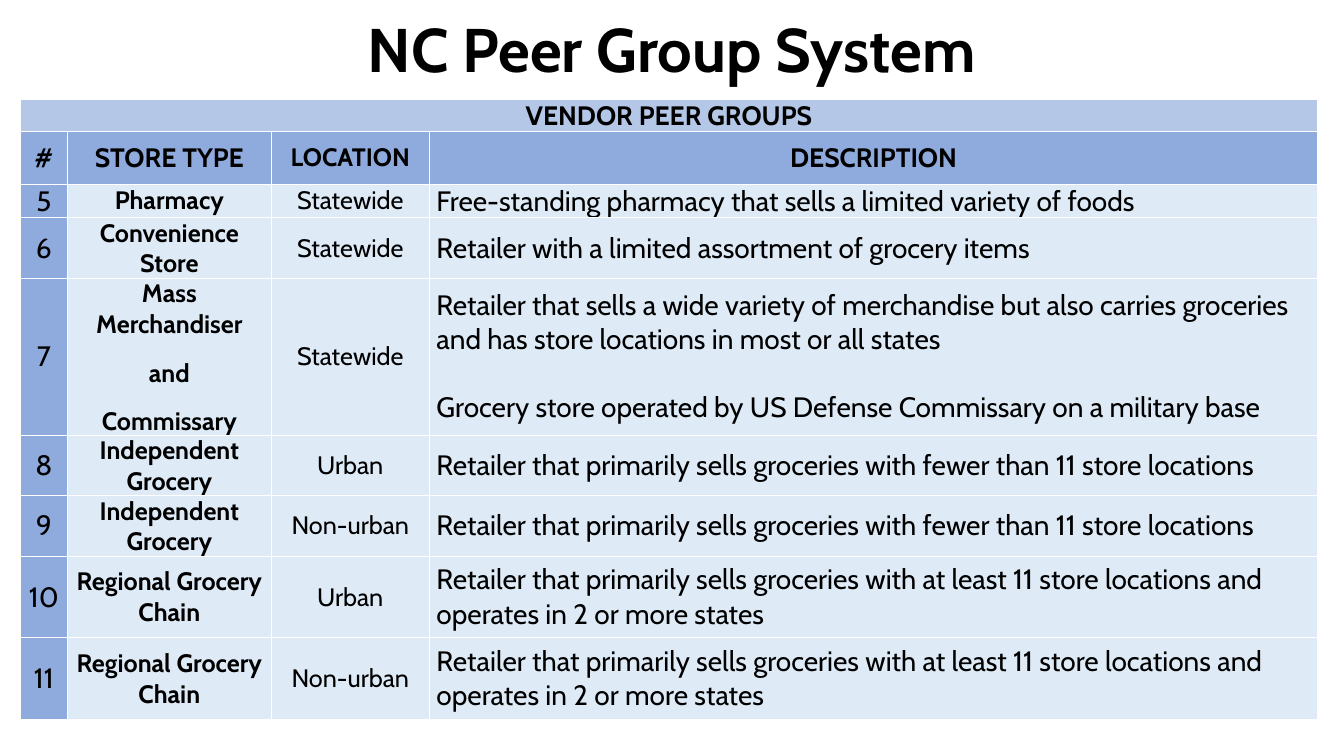
from lxml.etree import SubElement
from pptx import Presentation
from pptx.dml.color import RGBColor
from pptx.enum.text import MSO_ANCHOR as Anchor, PP_ALIGN as Align
from pptx.oxml.ns import qn
from pptx.util import Inches, Pt

BLACK = RGBColor(0x00, 0x00, 0x00)
WHITE = RGBColor(0xFF, 0xFF, 0xFF)
BANNER_BLUE = RGBColor(0xB4, 0xC7, 0xE7)
HEADING_BLUE = RGBColor(0x8F, 0xAA, 0xDC)
PALE_BLUE = RGBColor(0xDE, 0xEB, 0xF7)

COLUMN_WIDTHS = [0.47, 2.02, 1.57, 8.81]
ROW_HEIGHTS = [0.28, 0.52, 0.3, 0.54, 1.5, 0.6, 0.6, 0.81, 0.81]

BANNER = "VENDOR PEER GROUPS"
HEADINGS = ["#", "STORE TYPE", "LOCATION", "DESCRIPTION"]
HEADING_SIZES = [19, 19, 18, 19]

SMALL_GROCER = "Retailer that primarily sells groceries with fewer than 11 store locations"
LARGE_GROCER = ("Retailer that primarily sells groceries with at least 11 store locations "
                "and operates in 2 or more states")
PEER_GROUPS = [
    ("5", "Pharmacy", "Statewide",
     "Free-standing pharmacy that sells a limited variety of foods"),
    ("6", "Convenience Store", "Statewide",
     "Retailer with a limited assortment of grocery items"),
    ("7", "Mass Merchandiser\nand\nCommissary", "Statewide",
     "Retailer that sells a wide variety of merchandise but also carries groceries "
     "and has store locations in most or all states\n"
     "Grocery store operated by US Defense Commissary on a military base"),
    ("8", "Independent Grocery", "Urban", SMALL_GROCER),
    ("9", "Independent Grocery", "Non-urban", SMALL_GROCER),
    ("10", "Regional Grocery Chain", "Urban", LARGE_GROCER),
    ("11", "Regional Grocery Chain", "Non-urban", LARGE_GROCER),
]
# Per column: fill, size, bold, alignment, gap between paragraphs
GROUP_STYLES = [
    (HEADING_BLUE, 20, False, Align.CENTER, 0),
    (PALE_BLUE, 18, True, Align.CENTER, 12.8),
    (PALE_BLUE, 18, False, Align.CENTER, 0),
    (PALE_BLUE, 20, False, Align.LEFT, 24.4),
]


class PeerGroupSlide:
    font_name = "Cabin"
    cell_margin = Inches(0.07)

    def __init__(self, deck):
        self.slide = deck.slides.add_slide(deck.slide_layouts[6])

    def set_text(self, frame, text, size, bold, align, gap=0):
        frame.text = text
        frame.word_wrap = True
        for index, paragraph in enumerate(frame.paragraphs):
            paragraph.alignment = align
            paragraph.space_before = Pt(gap if index else 0)
            for run in paragraph.runs:
                run.font.name = self.font_name
                run.font.size = Pt(size)
                run.font.bold = bold
                run.font.color.rgb = BLACK

    def title(self, text, left, top, width, height):
        box = self.slide.shapes.add_textbox(
            Inches(left), Inches(top), Inches(width), Inches(height))
        frame = box.text_frame
        self.set_text(frame, text, 44, True, Align.CENTER)
        frame.vertical_anchor = Anchor.MIDDLE
        frame.paragraphs[0].line_spacing = 0.9

    def table(self, left, top, widths, heights):
        frame = self.slide.shapes.add_table(
            len(heights), len(widths), Inches(left), Inches(top),
            Inches(sum(widths)), Inches(sum(heights)))
        table = frame.table
        table.first_row = table.horz_banding = False
        for column, width in zip(table.columns, widths):
            column.width = Inches(width)
        for row, height in zip(table.rows, heights):
            row.height = Inches(height)
        return table

    def cell(self, cell, text, fill, size, bold, align=Align.CENTER, gap=0):
        self.set_text(cell.text_frame, text, size, bold, align, gap)
        cell.vertical_anchor = Anchor.MIDDLE
        cell.margin_left = cell.margin_right = self.cell_margin
        cell.margin_top = cell.margin_bottom = 0
        self.borders(cell)
        cell.fill.solid()
        cell.fill.fore_color.rgb = fill

    def borders(self, cell):
        properties = cell._tc.get_or_add_tcPr()
        for side in ("lnL", "lnR", "lnT", "lnB"):
            line = SubElement(properties, qn(f"a:{side}"), w=str(Pt(1)))
            solid = SubElement(line, qn("a:solidFill"))
            SubElement(solid, qn("a:srgbClr"), val=str(WHITE))


def main():
    deck = Presentation()
    deck.slide_width, deck.slide_height = Inches(13.33), Inches(7.5)
    page = PeerGroupSlide(deck)
    page.title("NC Peer Group System", 2.56, 0.05, 8.21, 0.95)

    groups = page.table(0.2, 0.99, COLUMN_WIDTHS, ROW_HEIGHTS)
    groups.cell(0, 0).merge(groups.cell(0, len(COLUMN_WIDTHS) - 1))
    page.cell(groups.cell(0, 0), BANNER, BANNER_BLUE, 19, True)
    for column, (heading, size) in enumerate(zip(HEADINGS, HEADING_SIZES)):
        page.cell(groups.cell(1, column), heading, HEADING_BLUE, size, True)
    for row, group in enumerate(PEER_GROUPS, start=2):
        for column, (text, style) in enumerate(zip(group, GROUP_STYLES)):
            page.cell(groups.cell(row, column), text, *style)

    deck.save("out.pptx")


if __name__ == "__main__":
    main()
